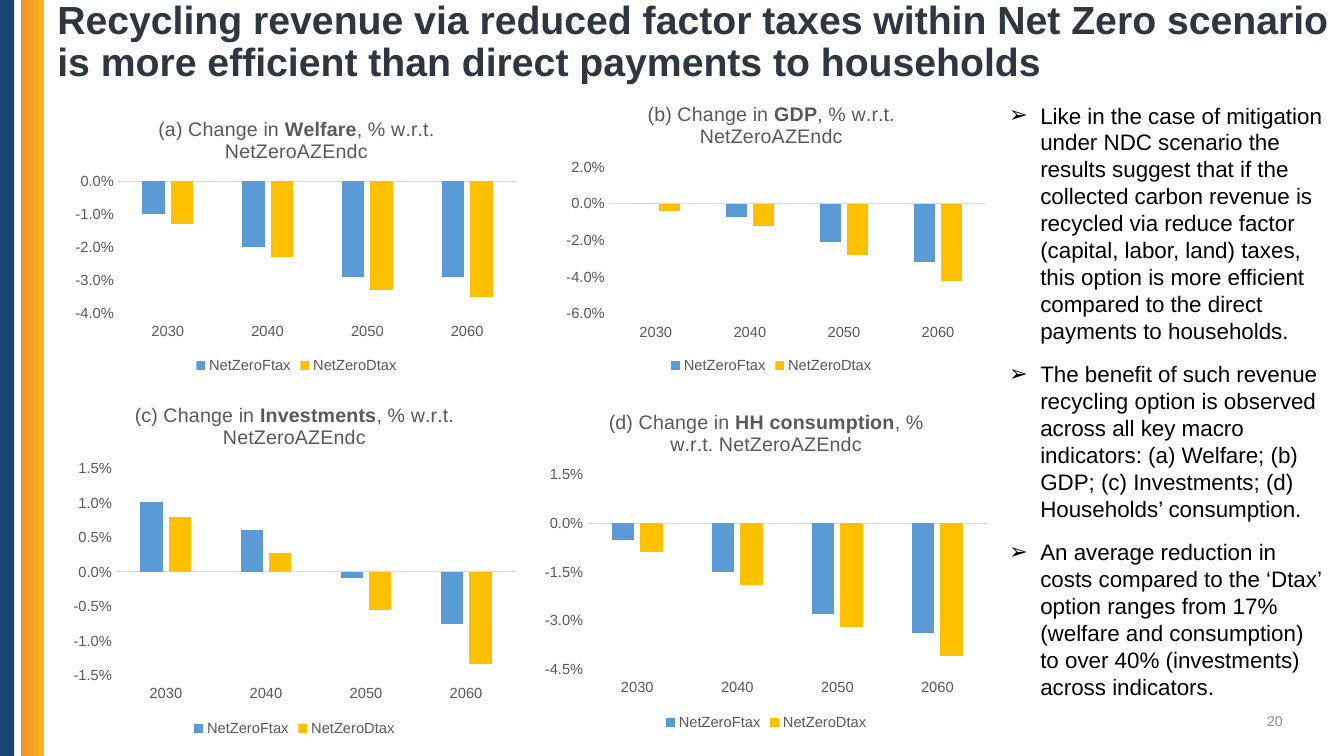
from lxml.etree import SubElement as Sub
from pptx import Presentation
from pptx.chart.data import CategoryChartData as Data
from pptx.dml.color import RGBColor as Rgb
from pptx.enum.chart import XL_CHART_TYPE as Kind, XL_LEGEND_POSITION as Spot
from pptx.enum.chart import XL_TICK_LABEL_POSITION as Label, XL_TICK_MARK as Tick
from pptx.enum.shapes import MSO_SHAPE as Shape
from pptx.enum.text import MSO_ANCHOR as Anchor, PP_ALIGN as Align
from pptx.oxml.ns import qn
from pptx.util import Inches, Pt

NAVY = Rgb(0x1B, 0x42, 0x73)
ORANGE = Rgb(0xF3, 0x8F, 0x22)
GOLD = Rgb(0xF1, 0xBA, 0x20)
INK = Rgb(0x2E, 0x36, 0x40)
BLACK = Rgb(0, 0, 0)
GRAY = Rgb(0x59, 0x59, 0x59)
PALE = Rgb(0x8C, 0x8C, 0x8C)
RULE = Rgb(0xD9, 0xD9, 0xD9)
BLUE = Rgb(0x5B, 0x9B, 0xD5)
AMBER = Rgb(0xFF, 0xC0, 0x00)

YEARS = ["2030", "2040", "2050", "2060"]
SERIES = {"NetZeroFtax": BLUE, "NetZeroDtax": AMBER}

# Boxes and plot areas are left, top, width, height in percent of the slide
CHARTS = [
    dict(title=("(a) Change in ", "Welfare", ", % w.r.t. NetZeroAZEndc"),
         box=(4.88, 13.6, 34.36, 36.4), plot=(8.78, 24, 29.7, 17.47),
         span=(-0.04, 0, 0.01),
         rows=[(-0.01, -0.02, -0.029, -0.029), (-0.013, -0.023, -0.033, -0.035)]),
    dict(title=("(b) Change in ", "GDP", ", % w.r.t. NetZeroAZEndc"),
         box=(41.11, 11.6, 32.56, 38.4), plot=(45.3, 22.1, 28, 19.4),
         span=(-0.06, 0.02, 0.02),
         rows=[(0, -0.007, -0.021, -0.032), (-0.004, -0.012, -0.028, -0.042)]),
    dict(title=("(c) Change in ", "Investments", ", % w.r.t. NetZeroAZEndc"),
         box=(4.73, 51.2, 34.36, 46.8), plot=(8.63, 62, 29.78, 27.33),
         span=(-0.015, 0.015, 0.005),
         rows=[(0.0102, 0.0061, -0.0009, -0.0076), (0.008, 0.0028, -0.0055, -0.0134)]),
    dict(title=("(d) Change in ", "HH consumption", ", % w.r.t. NetZeroAZEndc"),
         box=(39.83, 52.13, 34.36, 45.07), plot=(43.7, 62.8, 29.78, 25.73),
         span=(-0.045, 0.015, 0.015),
         rows=[(-0.005, -0.015, -0.028, -0.034), (-0.009, -0.019, -0.032, -0.041)]),
]

POINTS = [
    "Like in the case of mitigation under NDC scenario the results suggest that if "
    "the collected carbon revenue is recycled via reduce factor (capital, labor, "
    "land) taxes, this option is more efficient compared to the direct payments to "
    "households.",
    "The benefit of such revenue recycling option is observed across all key macro "
    "indicators: (a) Welfare; (b) GDP; (c) Investments; (d) Households’ consumption.",
    "An average reduction in costs compared to the ‘Dtax’ option ranges from 17% "
    "(welfare and consumption) to over 40% (investments) across indicators.",
]


def put(item, **vals):
    for name, val in vals.items():
        setattr(item, name, val)


class Deck:
    face = "Arial"

    def __init__(self):
        self.show = Presentation()
        put(self.show, slide_width=Inches(13.33), slide_height=Inches(7.5))
        self.slide = self.show.slides.add_slide(self.show.slide_layouts[6])

    def area(self, box):
        wide, high = self.show.slide_width, self.show.slide_height
        return [int(part * full / 100) for part, full in zip(box, (wide, high) * 2)]

    def font(self, font, size, color, bold=False):
        put(font, name=self.face, size=Pt(size), bold=bold)
        font.color.rgb = color

    def bar(self, box, *colors):
        bar = self.slide.shapes.add_shape(Shape.RECTANGLE, *self.area(box))
        bar.shadow.inherit = False
        bar.line.fill.background()
        if len(colors) == 1:
            bar.fill.solid()
            bar.fill.fore_color.rgb = colors[0]
        else:
            bar.fill.gradient()
            bar.fill.gradient_angle = 0
            for stop, color in zip(bar.fill.gradient_stops, colors):
                stop.color.rgb = color

    def text(self, box, lines, size, color, bold=False, mark=None,
             anchor=Anchor.MIDDLE, **form):
        frame = self.slide.shapes.add_textbox(*self.area(box)).text_frame
        put(frame, word_wrap=True, vertical_anchor=anchor)
        for num, line in enumerate(lines):
            para = frame.add_paragraph() if num else frame.paragraphs[0]
            put(para, **form)
            run = para.add_run()
            run.text = line
            self.font(run.font, size, color, bold)
            if mark:
                props = para._p.get_or_add_pPr()
                dent = Inches(0.31)
                props.set("marL", str(dent))
                props.set("indent", str(-dent))
                Sub(props, qn("a:buFont")).set("typeface", self.face)
                Sub(props, qn("a:buChar")).set("char", mark)

    def chart(self, title, box, plot, span, rows):
        data = Data(number_format="0.0%")
        data.categories = YEARS
        for name, vals in zip(SERIES, rows):
            data.add_series(name, vals)
        chart = self.slide.shapes.add_chart(
            Kind.COLUMN_CLUSTERED, *self.area(box), data).chart
        self.font(chart.font, 10.5, GRAY)

        # Title with its middle part in bold
        para = chart.chart_title.text_frame.paragraphs[0]
        for num, part in enumerate(title):
            run = para.add_run()
            run.text = part
            self.font(run.font, 14, GRAY, num == 1)
        chart.chart_title.include_in_layout = False

        # Legend and columns
        chart.has_legend = True
        put(chart.legend, position=Spot.BOTTOM, include_in_layout=False)
        self.font(chart.legend.font, 10.5, GRAY)
        group = chart.plots[0]
        put(group, gap_width=219, overlap=-27, vary_by_categories=False)
        for row, color in zip(group.series, SERIES.values()):
            row.invert_if_negative = False
            row.format.fill.solid()
            row.format.fill.fore_color.rgb = color

        # Axes
        cat, val = chart.category_axis, chart.value_axis
        for axis in (cat, val):
            put(axis, major_tick_mark=Tick.NONE, minor_tick_mark=Tick.NONE,
                has_major_gridlines=False)
            self.font(axis.tick_labels.font, 10.5, GRAY)
        cat.tick_label_position = Label.LOW
        cat.format.line.color.rgb = RULE
        cat.format.line.width = Pt(0.75)
        val.format.line.fill.background()
        low, high, step = span
        put(val, minimum_scale=low, maximum_scale=high, major_unit=step)
        put(val.tick_labels, number_format="0.0%", number_format_is_linked=False)
        self.place(chart, box, plot)

    def place(self, chart, box, plot):
        area = chart.element.find(".//" + qn("c:plotArea"))
        for old in area.findall(qn("c:layout")):
            area.remove(old)
        frame = Sub(area, qn("c:layout"))
        area.insert(0, frame)
        form = Sub(frame, qn("c:manualLayout"))
        left, top, wide, high = box
        vals = {"layoutTarget": "inner", "xMode": "edge", "yMode": "edge",
                "x": (plot[0] - left) / wide, "y": (plot[1] - top) / high,
                "w": plot[2] / wide, "h": plot[3] / high}
        for name, val in vals.items():
            Sub(form, qn("c:" + name)).set("val", str(val))


def main():
    deck = Deck()
    # Side bands
    deck.bar((-0.22, 0, 1.27, 100), NAVY)
    deck.bar((1.58, 0, 1.72, 100), ORANGE, GOLD)
    # Heading and page number
    deck.text((3.53, -0.93, 96.55, 13.2),
              ["Recycling revenue via reduced factor taxes within Net Zero scenario "
               "is more efficient than direct payments to households"],
              28, INK, bold=True, line_spacing=0.9)
    deck.text((73.67, 92.67, 22.5, 5.33), ["20"], 10, PALE, alignment=Align.RIGHT)
    # Findings
    deck.text((74.34, 12.8, 25.13, 81.2), POINTS, 16, BLACK, mark="➢",
              anchor=Anchor.TOP, space_after=Pt(12))
    # Charts
    for chart in CHARTS:
        deck.chart(**chart)
    deck.show.save("out.pptx")


if __name__ == "__main__":
    main()
